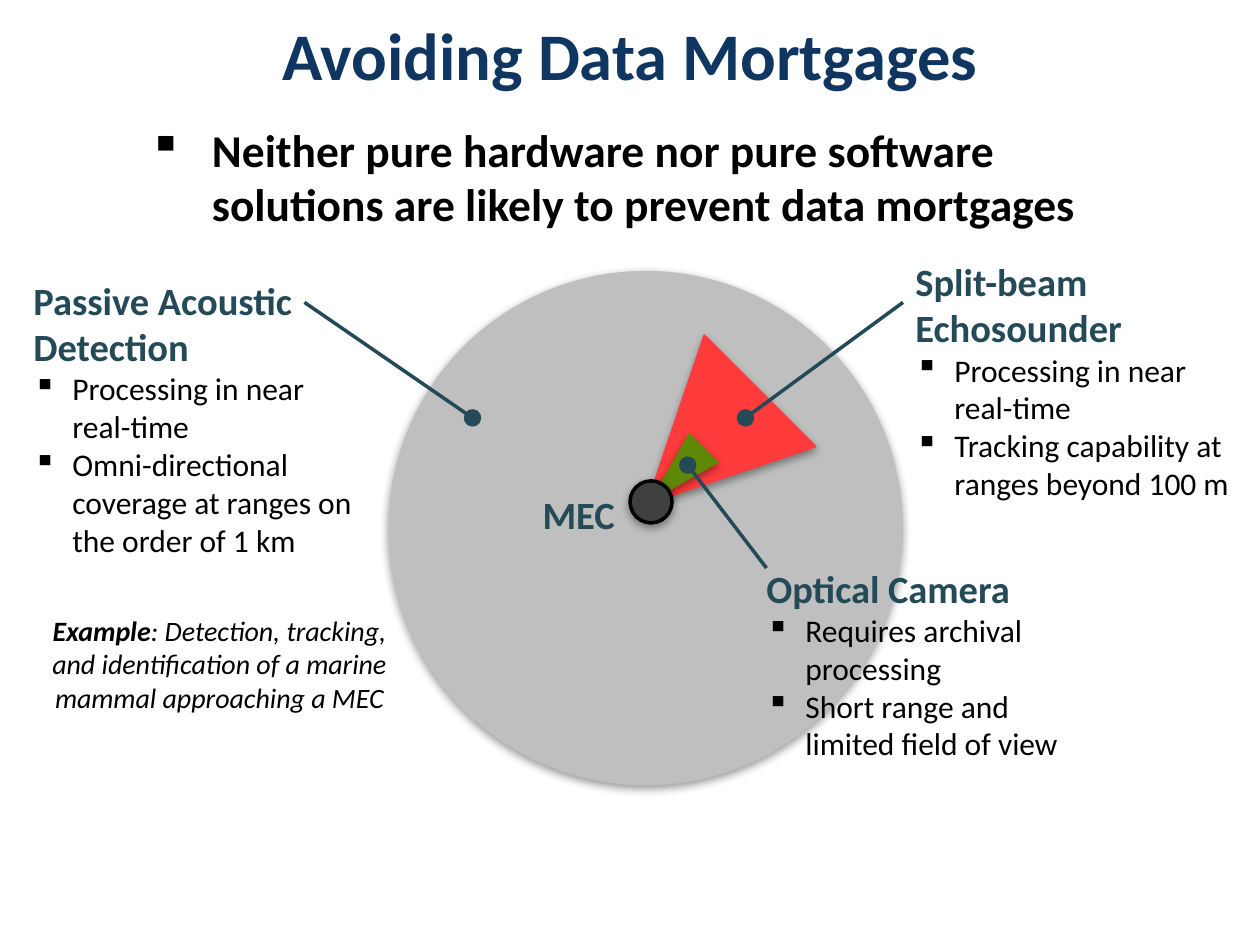
from dataclasses import dataclass

from lxml import etree
from pptx import Presentation
from pptx.dml.color import RGBColor
from pptx.enum.shapes import MSO_CONNECTOR, MSO_SHAPE
from pptx.enum.text import MSO_ANCHOR, MSO_AUTO_SIZE, PP_ALIGN
from pptx.oxml.ns import qn
from pptx.util import Inches, Pt

OVAL, TRIANGLE = MSO_SHAPE.OVAL, MSO_SHAPE.ISOSCELES_TRIANGLE
STRAIGHT = MSO_CONNECTOR.STRAIGHT
LEFT, CENTER = PP_ALIGN.LEFT, PP_ALIGN.CENTER
TOP = MSO_ANCHOR.TOP
FIXED, GROW = MSO_AUTO_SIZE.NONE, MSO_AUTO_SIZE.SHAPE_TO_FIT_TEXT


@dataclass(frozen=True)
class Theme:
    font: str = "Calibri"
    navy: str = "0F3661"
    teal: str = "244A58"
    black: str = "000000"
    range_gray: str = "BFBFBF"
    beam_red: str = "FF3B3B"
    camera_green: str = "5E8805"
    device_gray: str = "404040"
    title: int = 38
    lead: int = 26
    heading: int = 22
    body: int = 18
    note: int = 16


THEME = Theme()
WIDTH, HEIGHT = Inches(10), Inches(7.5)
COLUMNS, ROWS = 120, 90

STYLES = {
    "title": dict(size=THEME.title, color=THEME.navy, bold=True),
    "lead": dict(size=THEME.lead, color=THEME.black, bold=True),
    "heading": dict(size=THEME.heading, color=THEME.teal, bold=True),
    "body": dict(size=THEME.body, color=THEME.black, bold=False),
    "note": dict(size=THEME.note, color=THEME.black, bold=False, italic=True),
    "note label": dict(size=THEME.note, color=THEME.black, bold=True, italic=True),
}
INDENTS = {"lead": 0.5, "body": 0.31}

TITLE = ("Avoiding Data Mortgages", (0, 1.3, 120, 7.7))
LEAD = ("Neither pure hardware nor pure software solutions are likely to prevent data mortgages",
        (13, 11, 93, 11.8))
SENSORS = [
    ("Passive Acoustic Detection", (2, 25.8, 33, 28.3),
     ["Processing in near real-time",
      "Omni-directional coverage at ranges on the order of 1 km"]),
    ("Split-beam Echosounder", (86, 24, 33, 24.6),
     ["Processing in near real-time",
      "Tracking capability at ranges beyond 100 m"]),
    ("Optical Camera", (71.8, 53.2, 33, 20.2),
     ["Requires archival processing",
      "Short range and limited field of view"]),
]
DEVICE_LABEL = ("MEC", (50.5, 46.2, 11, 5.6))
EXAMPLE = ([("Example", "note label"),
            (": Detection, tracking, and identification of a marine mammal approaching a MEC", "note")],
           (2.4, 57.8, 37, 10.9))
RANGES = [
    (OVAL, (37, 25.8, 49, 49), 0, THEME.range_gray, None),
    (TRIANGLE, (59.5, 35, 15, 15.2), 225, THEME.beam_red, (THEME.beam_red, 1)),
    (TRIANGLE, (62.5, 41.6, 4, 7.2), 225, THEME.camera_green, None),
    (OVAL, (60, 45.8, 4, 4), 0, THEME.device_gray, (THEME.black, 2)),
]
POINTERS = [
    ((29, 28.8), (45, 39.8)),
    ((86, 28.8), (71, 39.8)),
    ((73, 54.1), (65.5, 44.3)),
]


def grid(*lengths):
    """Turn alternating column and row counts into slide lengths."""
    units = (WIDTH / COLUMNS, HEIGHT / ROWS)
    return [round(length * units[index % 2]) for index, length in enumerate(lengths)]


def rgb(color):
    """Return a colour object for a hex value."""
    return RGBColor.from_string(color)


def add_child(parent, tag, **attributes):
    """Append a drawing element with its attributes."""
    values = {name: str(value) for name, value in attributes.items()}
    return etree.SubElement(parent, qn(tag), values)


def style_font(font, style):
    """Apply a named text style to a font."""
    values = dict(STYLES[style], name=THEME.font)
    font.color.rgb = rgb(values.pop("color"))
    values["size"] = Pt(values["size"])
    for name, value in values.items():
        setattr(font, name, value)


def fill_text(box, paragraphs, align=LEFT, fit=GROW):
    """Write paragraphs, each a list of (text, style) spans."""
    frame = box.text_frame
    for name, value in dict(word_wrap=True, auto_size=fit, vertical_anchor=TOP).items():
        setattr(frame, name, value)
    for index, spans in enumerate(paragraphs):
        para = frame.add_paragraph() if index else frame.paragraphs[0]
        para.alignment = align
        style = spans[0][1]
        if style in INDENTS:
            indent = Inches(INDENTS[style])
            properties = para._p.get_or_add_pPr()
            properties.set("marL", str(indent))
            properties.set("indent", str(-indent))
            add_child(properties, "a:buChar", char="▪")
        for text, span_style in spans:
            span = para.add_run()
            span.text = text
            style_font(span.font, span_style)


def add_text(slide, place, paragraphs, align=LEFT):
    """Add a text box on the grid."""
    fill_text(slide.shapes.add_textbox(*grid(*place)), paragraphs, align)


def add_range(slide, kind, place, rotation, color, outline):
    """Add a filled shape with a soft shadow."""
    shape = slide.shapes.add_shape(kind, *grid(*place))
    shape.rotation = rotation
    shape.fill.solid()
    shape.fill.fore_color.rgb = rgb(color)
    if outline:
        shape.line.color.rgb = rgb(outline[0])
        shape.line.width = Pt(outline[1])
    else:
        shape.line.fill.background()
    effects = add_child(shape._element.spPr, "a:effectLst")
    shadow = add_child(effects, "a:outerShdw", blurRad=Pt(5), dist=Pt(2),
                       dir=90 * 60000, rotWithShape=0)
    tint = add_child(shadow, "a:srgbClr", val=THEME.black)
    add_child(tint, "a:alpha", val=40000)


def add_pointer(slide, start, end):
    """Add a line that ends in a dot."""
    pointer = slide.shapes.add_connector(STRAIGHT, *grid(*start, *end))
    pointer.line.color.rgb = rgb(THEME.teal)
    pointer.line.width = Pt(2)
    add_child(pointer.line._get_or_add_ln(), "a:tailEnd", type="oval", w="lg", len="lg")
    add_child(pointer._element.spPr, "a:effectLst")


def set_title(slide, text, place):
    """Place and format the title placeholder."""
    title = slide.shapes.title
    title.left, title.top, title.width, title.height = grid(*place)
    for side in ("left", "top", "right", "bottom"):
        setattr(title.text_frame, f"margin_{side}", 0)
    fill_text(title, [[(text, "title")]], CENTER, FIXED)


def main():
    """Build the slide and save it."""
    deck = Presentation()
    deck.slide_width, deck.slide_height = WIDTH, HEIGHT
    page = deck.slides.add_slide(deck.slide_layouts[5])
    set_title(page, *TITLE)
    add_text(page, LEAD[1], [[(LEAD[0], "lead")]])
    for item in RANGES:
        add_range(page, *item)
    for start, end in POINTERS:
        add_pointer(page, start, end)
    for heading, place, points in SENSORS:
        add_text(page, place, [[(heading, "heading")]] + [[(point, "body")] for point in points])
    add_text(page, DEVICE_LABEL[1], [[(DEVICE_LABEL[0], "heading")]])
    add_text(page, EXAMPLE[1], [EXAMPLE[0]], CENTER)
    deck.save("out.pptx")


if __name__ == "__main__":
    main()
